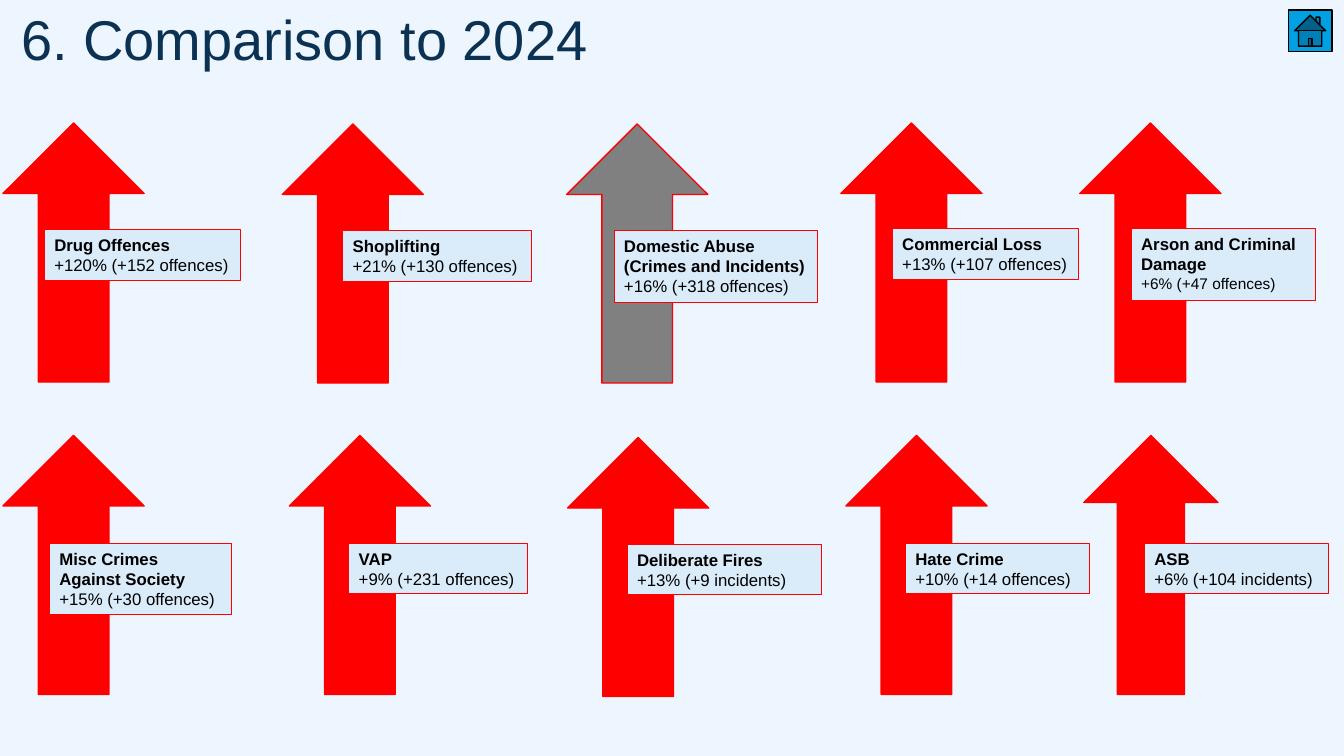
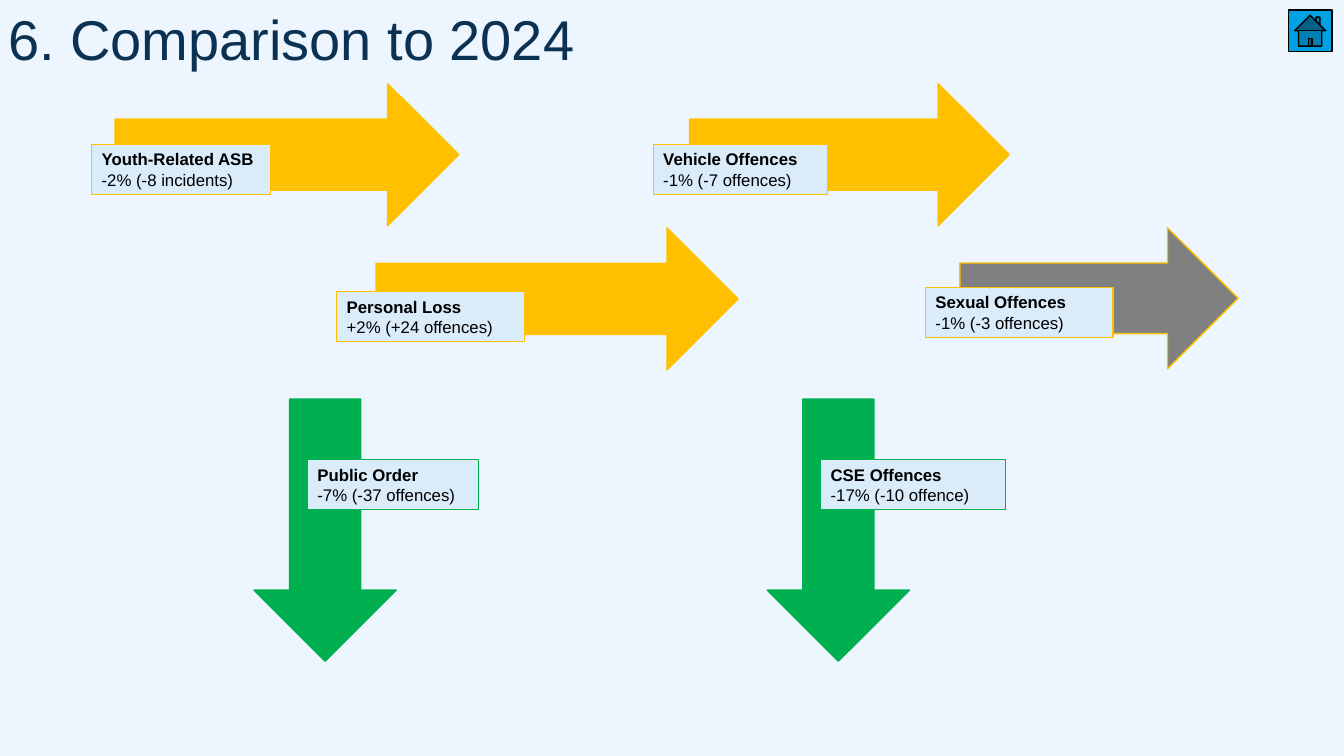
from dataclasses import dataclass
from pptx import Presentation
from pptx.dml.color import RGBColor
from pptx.enum import shapes, text
from pptx.util import Inches, Pt


@dataclass(frozen=True)
class Theme:
    font: str = "Arial"
    background: str = "EDF6FF"
    title: str = "0B3153"
    label: str = "DAEBFA"
    ink: str = "000000"
    home: str = "00A0E2"
    rise: str = "FF0000"
    steady: str = "FFC000"
    fall: str = "00B050"
    grey: str = "808080"
    title_size: float = 40
    label_size: float = 12
    small_size: float = 11
    arrow_line: float = 1
    label_line: float = 0.75


@dataclass(frozen=True)
class Marker:
    name: str
    change: str
    arrow: tuple
    label: tuple
    lines: int = 2
    fill: str = ""
    change_size: float = Theme.label_size


THEME = Theme()
SHAPE = shapes.MSO_SHAPE
TITLE = "6. Comparison to 2024"
HOME_BOX = (12.78, 0.1, 0.43, 0.41)
UP = (1.4, 2.57)
DOWN = (1.41, 2.6)

RISES = [
    Marker("Drug Offences", "+120% (+152 offences)", (0.03, 1.22, *UP), (0.44, 2.28, 1.95)),
    Marker("Shoplifting", "+21% (+130 offences)", (2.8, 1.23, *UP), (3.4, 2.29, 1.87)),
    Marker("Domestic Abuse (Crimes and Incidents)", "+16% (+318 offences)",
           (5.62, 1.23, *UP), (6.09, 2.29, 2.02), lines=3, fill=THEME.grey),
    Marker("Commercial Loss", "+13% (+107 offences)", (8.34, 1.22, *UP), (8.85, 2.27, 1.85)),
    Marker("Arson and Criminal Damage", "+6% (+47 offences)",
           (10.71, 1.22, *UP), (11.22, 2.27, 1.83), lines=3, change_size=THEME.small_size),
    Marker("Misc Crimes Against Society", "+15% (+30 offences)",
           (0.03, 4.32, *UP), (0.49, 5.39, 1.81), lines=3),
    Marker("VAP", "+9% (+231 offences)", (2.87, 4.32, *UP), (3.46, 5.39, 1.77)),
    Marker("Deliberate Fires", "+13% (+9 incidents)", (5.63, 4.34, *UP), (6.22, 5.4, 1.93)),
    Marker("Hate Crime", "+10% (+14 offences)", (8.39, 4.32, *UP), (8.98, 5.39, 1.83)),
    Marker("ASB", "+6% (+104 incidents)", (10.75, 4.32, 1.33, 2.57), (11.35, 5.39, 1.83)),
]
STEADY = [
    Marker("Youth-Related ASB", "-2% (-8 incidents)", (1.14, 0.83, 3.41, 1.41), (0.91, 1.43, 1.77)),
    Marker("Vehicle Offences", "-1% (-7 offences)", (6.84, 0.83, 3.17, 1.41), (6.48, 1.43, 1.73)),
    Marker("Personal Loss", "+2% (+24 offences)", (3.73, 2.26, 3.59, 1.41), (3.34, 2.89, 1.86)),
    Marker("Sexual Offences", "-1% (-3 offences)", (9.52, 2.26, 2.76, 1.4), (9.18, 2.85, 1.86),
           fill=THEME.grey),
]
FALLS = [
    Marker("Public Order", "-7% (-37 offences)", (2.52, 3.96, *DOWN), (3.05, 4.56, 1.7)),
    Marker("CSE Offences", "-17% (-10 offence)", (7.61, 3.96, *DOWN), (8.14, 4.56, 1.83)),
]
PAGES = [
    {"title_box": (0.21, 0.12, 11.03, 0.84),
     "groups": [(SHAPE.UP_ARROW, THEME.rise, RISES)]},
    {"title_box": (0.08, 0.12, 11.08, 1.21),
     "groups": [(SHAPE.RIGHT_ARROW, THEME.steady, STEADY),
                (SHAPE.DOWN_ARROW, THEME.fall, FALLS)]},
]


def rgb(value):
    return RGBColor.from_string(value)


def write(para, content, size=THEME.label_size, color=THEME.ink, bold=False):
    para.alignment = text.PP_ALIGN.LEFT
    span = para.add_run()
    span.text = content
    span.font.name = THEME.font
    span.font.size = Pt(size)
    span.font.bold = bold
    span.font.color.rgb = rgb(color)


def add_box(page, kind, place, fill, line, width):
    box = page.shapes.add_shape(kind, *map(Inches, place))
    box.shadow.inherit = False
    box.fill.solid()
    box.fill.fore_color.rgb = rgb(fill)
    box.line.color.rgb = rgb(line)
    box.line.width = Pt(width)
    return box


def add_label(page, marker, line):
    height = 0.08 + 0.21 * marker.lines
    box = add_box(page, SHAPE.RECTANGLE, (*marker.label, height), THEME.label, line, THEME.label_line)
    frame = box.text_frame
    frame.word_wrap = True
    frame.auto_size = text.MSO_AUTO_SIZE.SHAPE_TO_FIT_TEXT
    frame.vertical_anchor = text.MSO_ANCHOR.TOP
    write(frame.paragraphs[0], marker.name, bold=True)
    write(frame.add_paragraph(), marker.change, size=marker.change_size)


def set_title(page, place):
    box = page.shapes.title
    box.left, box.top, box.width, box.height = map(Inches, place)
    frame = box.text_frame
    frame.margin_left = frame.margin_right = frame.margin_top = frame.margin_bottom = 0
    frame.word_wrap = True
    frame.auto_size = text.MSO_AUTO_SIZE.NONE
    frame.vertical_anchor = text.MSO_ANCHOR.TOP
    para = frame.paragraphs[0]
    para.line_spacing = 0.9
    write(para, TITLE, size=THEME.title_size, color=THEME.title)


def build_page(deck, title_box, groups):
    page = deck.slides.add_slide(deck.slide_layouts[5])
    set_title(page, title_box)
    add_box(page, SHAPE.ACTION_BUTTON_HOME, HOME_BOX, THEME.home, THEME.ink, THEME.arrow_line)
    for kind, color, markers in groups:
        for marker in markers:
            add_box(page, kind, marker.arrow, marker.fill or color, color, THEME.arrow_line)
            add_label(page, marker, color)


def main():
    deck = Presentation()
    deck.slide_width, deck.slide_height = Inches(13.33), Inches(7.5)
    backdrop = deck.slide_master.background.fill
    backdrop.solid()
    backdrop.fore_color.rgb = rgb(THEME.background)
    for content in PAGES:
        build_page(deck, **content)
    deck.save("out.pptx")


if __name__ == "__main__":
    main()
